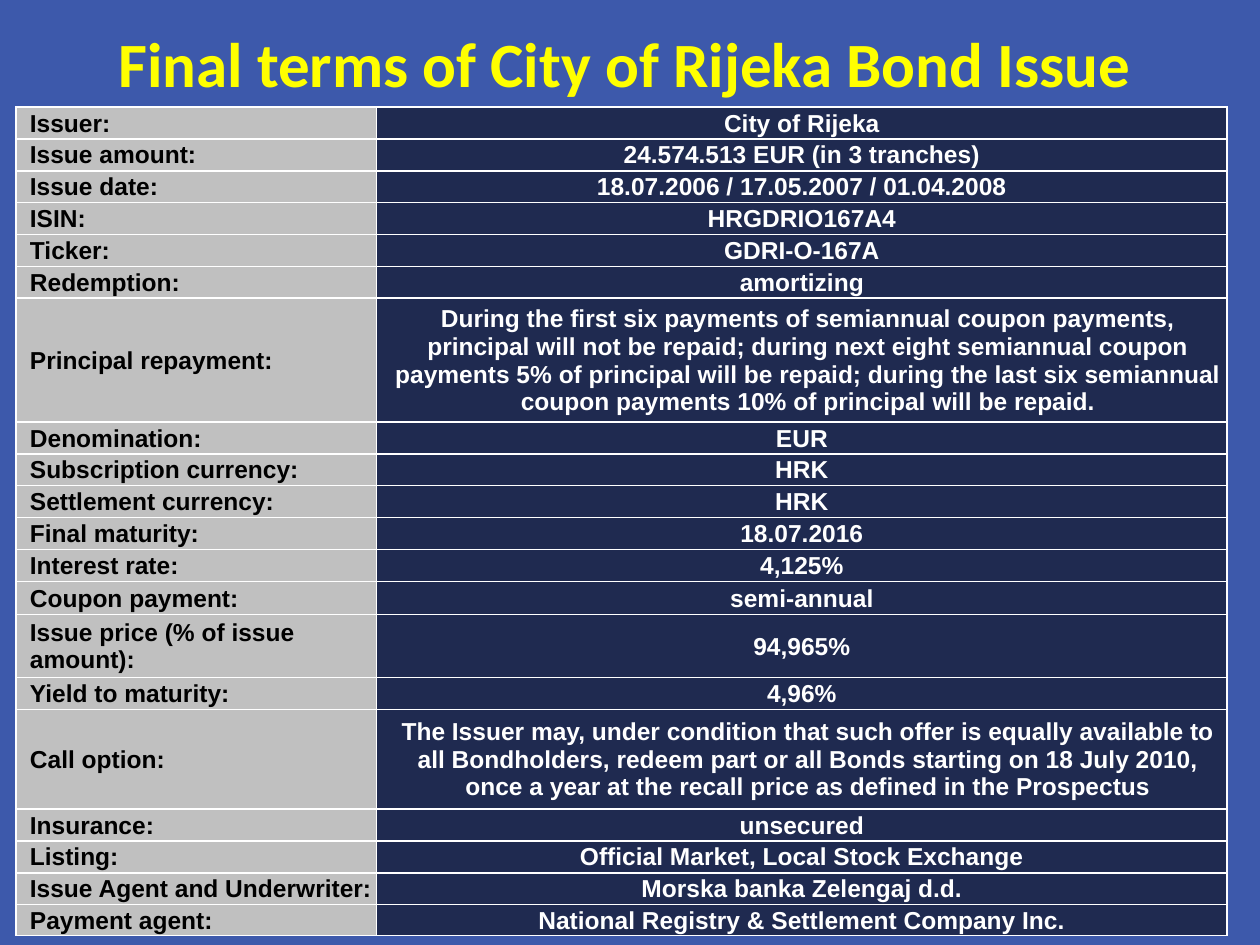
from pptx import Presentation
from pptx.dml.color import RGBColor as Color
from pptx.enum.text import MSO_ANCHOR as Anchor, PP_ALIGN as Align
from pptx.oxml.ns import qn
from pptx.util import Pt
from lxml.etree import SubElement as Sub

BLUE = Color(0x3D, 0x59, 0xAB)
NAVY = Color(0x1F, 0x2A, 0x50)
GREY = Color(0xC0, 0xC0, 0xC0)
YELLOW = Color(0xFF, 0xFF, 0x00)
WHITE = Color(0xFF, 0xFF, 0xFF)
BLACK = Color(0x00, 0x00, 0x00)

LINE = 18.2
INDENT = 7.2
WIDTHS = (206, 486)

TERMS = [
    ("Issuer:", "City of Rijeka", LINE),
    ("Issue amount:", "24.574.513 EUR (in 3 tranches)", LINE),
    ("Issue date:", "18.07.2006 / 17.05.2007 / 01.04.2008", LINE),
    ("ISIN:", "HRGDRIO167A4", LINE),
    ("Ticker:", "GDRI-O-167A", LINE),
    ("Redemption:", "amortizing", LINE),
    ("Principal repayment:",
     "During the first six payments of semiannual coupon payments, "
     "principal will not be repaid; during next eight semiannual coupon "
     "payments 5% of principal will be repaid; during the last six "
     "semiannual coupon payments 10% of principal will be repaid.", 70.8),
    ("Denomination:", "EUR", LINE),
    ("Subscription currency:", "HRK", LINE),
    ("Settlement currency:", "HRK", LINE),
    ("Final maturity:", "18.07.2016", LINE),
    ("Interest rate:", "4,125%", LINE),
    ("Coupon payment:", "semi-annual", 19),
    ("Issue price (% of issue amount):", "94,965%", 36),
    ("Yield to maturity:", "4,96%", LINE),
    ("Call option:",
     "The Issuer may, under condition that such offer is equally available "
     "to all Bondholders, redeem part or all Bonds starting on 18 July 2010, "
     "once a year at the recall price as defined in the Prospectus", 57),
    ("Insurance:", "unsecured", LINE),
    ("Listing:", "Official Market, Local Stock Exchange", LINE),
    ("Issue Agent and Underwriter:", "Morska banka Zelengaj d.d.", LINE),
    ("Payment agent:", "National Registry & Settlement Company Inc.", 12),
]


def add_run(para, text, font, size, color):
    run = para.add_run()
    run.text = text
    run.font.name = font
    run.font.size = Pt(size)
    run.font.bold = True
    run.font.color.rgb = color


def add_title(slide, text):
    box = slide.shapes.add_textbox(Pt(60.5), Pt(5.8), Pt(598.5), Pt(60))
    frame = box.text_frame
    frame.word_wrap = True
    frame.vertical_anchor = Anchor.MIDDLE
    add_run(frame.paragraphs[0], text, "Calibri", 36, YELLOW)


def add_border(cell):
    props = cell._tc.get_or_add_tcPr()
    for side in ("lnL", "lnR", "lnT", "lnB"):
        line = Sub(props, qn("a:" + side), w=str(Pt(1)))
        fill = Sub(line, qn("a:solidFill"))
        Sub(fill, qn("a:srgbClr"), val=str(WHITE))


def fill_cell(cell, text, back, color, align, indent):
    add_border(cell)
    cell.fill.solid()
    cell.fill.fore_color.rgb = back
    cell.vertical_anchor = Anchor.MIDDLE
    cell.margin_left = cell.margin_right = cell.margin_top = Pt(0.7)
    cell.margin_bottom = Pt(0)
    para = cell.text_frame.paragraphs[0]
    para.alignment = align
    para._p.get_or_add_pPr().set("marL", str(Pt(indent)))
    add_run(para, text, "Arial", 14, color)


def add_terms(slide):
    total = sum(height for _, _, height in TERMS)
    frame = slide.shapes.add_table(
        len(TERMS), len(WIDTHS), Pt(9.2), Pt(61.2), Pt(sum(WIDTHS)), Pt(total))
    table = frame.table
    for col, width in zip(table.columns, WIDTHS):
        col.width = Pt(width)
    for row, (label, value, height) in zip(table.rows, TERMS):
        row.height = Pt(height)
        left, right = row.cells
        fill_cell(left, label, GREY, BLACK, Align.LEFT, INDENT)
        indent = INDENT if len(value) > 60 else 0
        fill_cell(right, value, NAVY, WHITE, Align.CENTER, indent)


def main():
    deck = Presentation()
    deck.slide_width, deck.slide_height = Pt(720), Pt(540)
    slide = deck.slides.add_slide(deck.slide_layouts[6])
    back = slide.background.fill
    back.solid()
    back.fore_color.rgb = BLUE
    add_title(slide, "Final terms of City of Rijeka Bond Issue")
    add_terms(slide)
    deck.save("out.pptx")


if __name__ == "__main__":
    main()
